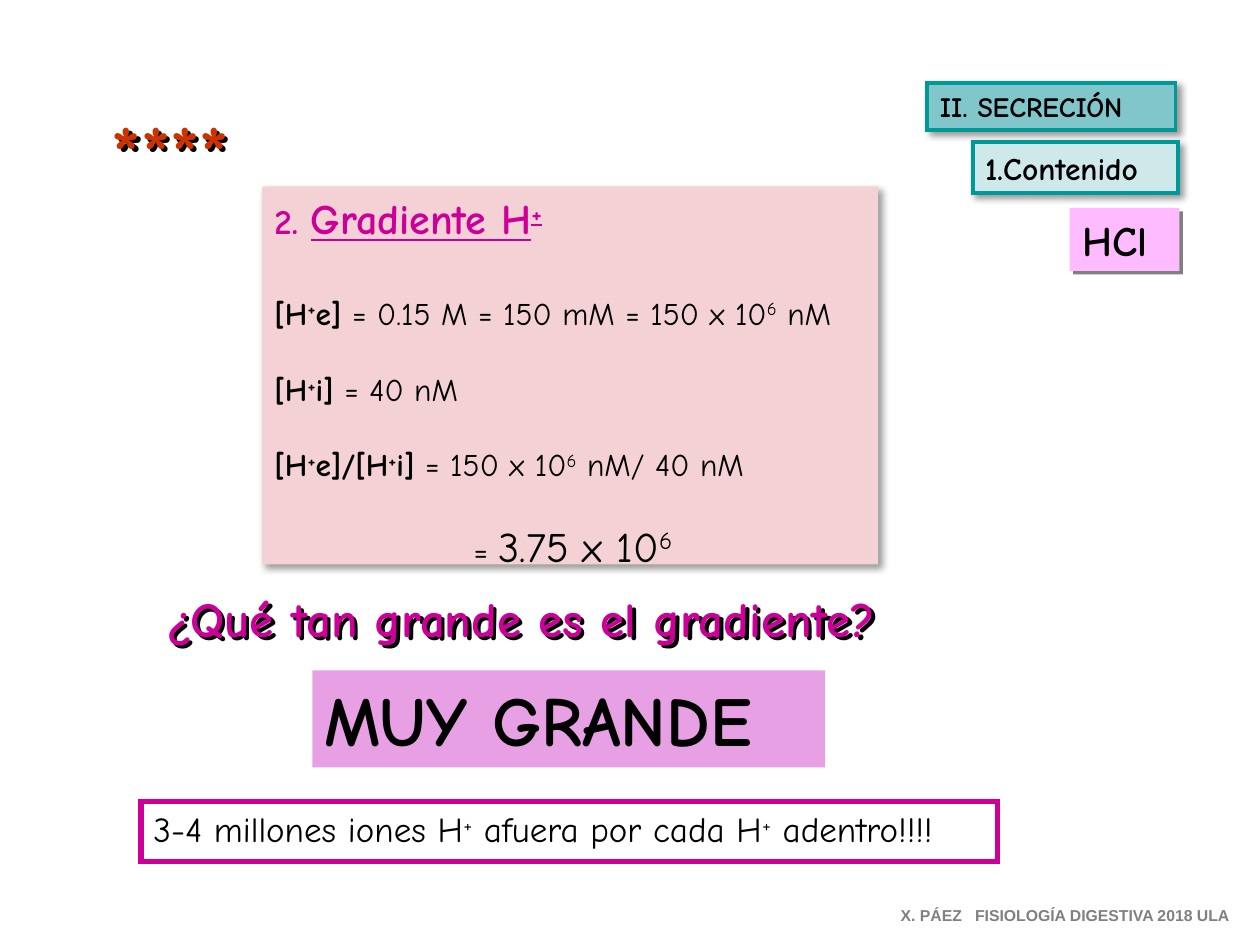
"""Build the slide on the size of the H+ gradient in gastric secretion."""
from lxml.etree import SubElement
from pptx import Presentation
from pptx.dml.color import RGBColor
from pptx.enum.shapes import MSO_SHAPE
from pptx.enum.text import MSO_ANCHOR, MSO_AUTO_SIZE, PP_ALIGN
from pptx.oxml.ns import qn
from pptx.util import Inches, Pt

COLORS = {
    "black": "000000", "gray": "808080", "magenta": "CC0099", "red": "CC3300",
    "rose": "F3D1D4", "orchid": "E8A0E5", "pink": "FFBBFF",
    "teal": "009999", "teal_mid": "81C6CB", "teal_light": "CFE9EB",
}
SOFT = ("black", 40, 4, 3)
HARD = ("gray", 100, 0, 2.8)
TEXT = ("black", 100, 0, 2.8)


def style_box(shape, box, fill=None, line=None, line_width=0, shadow=None):
    """Place a shape and set its fill, outline, shadow and text frame."""
    shape.left, shape.top, shape.width, shape.height = map(Inches, box)
    if fill:
        shape.fill.solid()
        shape.fill.fore_color.rgb = RGBColor.from_string(COLORS[fill])
    else:
        shape.fill.background()
    if line:
        shape.line.color.rgb = RGBColor.from_string(COLORS[line])
        shape.line.width = Pt(line_width)
        SubElement(shape._element.spPr.find(qn("a:ln")), qn("a:miter"), lim="800000")
    else:
        shape.line.fill.background()
    shape.shadow.inherit = False
    if shadow:
        color, opacity, blur, distance = shadow
        effects = shape._element.spPr.find(qn("a:effectLst"))
        outer = SubElement(effects, qn("a:outerShdw"), blurRad=str(Pt(blur)),
                           dist=str(Pt(distance)), dir="2700000", algn="tl", rotWithShape="0")
        tint = SubElement(outer, qn("a:srgbClr"), val=COLORS[color])
        SubElement(tint, qn("a:alpha"), val=str(opacity * 1000))
    frame = shape.text_frame
    frame.word_wrap = True
    frame.auto_size = MSO_AUTO_SIZE.NONE
    frame.vertical_anchor = MSO_ANCHOR.TOP


def add_text(paragraph, text, size, color="black", bold=True, underline=False, font="Comic Neue"):
    """Add runs to a paragraph; text between carets is superscript."""
    paragraph.alignment = PP_ALIGN.LEFT
    for index, part in enumerate(text.split("^")):
        if not part:
            continue
        run = paragraph.add_run()
        run.text = part
        run.font.name, run.font.size = font, Pt(size)
        run.font.bold, run.font.underline = bold, underline
        run.font.color.rgb = RGBColor.from_string(COLORS[color])
        if index % 2:
            run.font._element.set("baseline", "30000")


presentation = Presentation()
presentation.slide_width, presentation.slide_height = Inches(10), Inches(7.5)
slide = presentation.slides.add_slide(presentation.slide_layouts[5])

title = slide.shapes.title
style_box(title, (7.36, 0.66, 1.97, 0.37), "teal_mid", "teal", 2.25, SOFT)
add_text(title.text_frame.paragraphs[0], "II. SECRECIÓN", 16)

panel = slide.shapes.add_shape(MSO_SHAPE.RECTANGLE, 0, 0, 0, 0)
style_box(panel, (2.08, 1.48, 4.89, 3), "rose", shadow=SOFT)
panel.text_frame.margin_bottom = 0
calculation = [
    (0, 0, [("2. ", 20, "magenta", True), ("Gradiente H^+^", 24, "magenta", True, True)]),
    (29, 0, [("[H^+^e]", 18), (" = 0.15 M = 150 mM = 150 x 10^6^ nM", 18, "black", False)]),
    (22, 0, [("[H^+^i]", 18), (" = 40 nM", 18, "black", False)]),
    (21.5, 0, [("[H^+^e]/[H^+^i]", 18), (" = 150 x 10^6^ nM/ 40 nM", 18, "black", False)]),
    (21, 1.58, [("= ", 18, "black", False), ("3.75 x 10^6^", 24, "black", False)]),
]
for index, (space, indent, pieces) in enumerate(calculation):
    frame = panel.text_frame
    paragraph = frame.add_paragraph() if index else frame.paragraphs[0]
    paragraph.space_before = Pt(space)
    paragraph._p.get_or_add_pPr().set("marL", str(Inches(indent)))
    for piece in pieces:
        add_text(paragraph, *piece)

labels = [
    ((1.12, 6.36, 6.8, 0.48), (None, "magenta", 3),
     ("3-4 millones iones H^+^ afuera por cada H^+^ adentro!!!!", 20, "black", False)),
    ((2.48, 5.32, 4.07, 0.77), ("orchid",), ("MUY GRANDE", 40)),
    ((8.49, 1.65, 0.87, 0.5), ("pink", None, 0, HARD), ("HCl", 24)),
    ((7.72, 1.13, 1.63, 0.4), ("teal_light", "teal", 2.25, SOFT), ("1.Contenido", 18)),
]
for box, look, words in labels:
    shape = slide.shapes.add_shape(MSO_SHAPE.RECTANGLE, 0, 0, 0, 0)
    style_box(shape, box, *look)
    add_text(shape.text_frame.paragraphs[0], *words)

captions = [
    ((1.22, 4.62, 6.6, 0.57), TEXT, ("¿Qué tan grande es el gradiente?", 28, "magenta")),
    ((0.79, 0.77, 1.51, 0.84), TEXT, ("****", 44, "red")),
    ((7.05, 7.14, 2.86, 0.25), None,
     ("X. PÁEZ   FISIOLOGÍA DIGESTIVA 2018 ULA", 9, "gray", True, False, "Arial")),
]
for box, shadow, words in captions:
    caption = slide.shapes.add_textbox(0, 0, 0, 0)
    style_box(caption, box, shadow=shadow)
    add_text(caption.text_frame.paragraphs[0], *words)

presentation.save("out.pptx")
